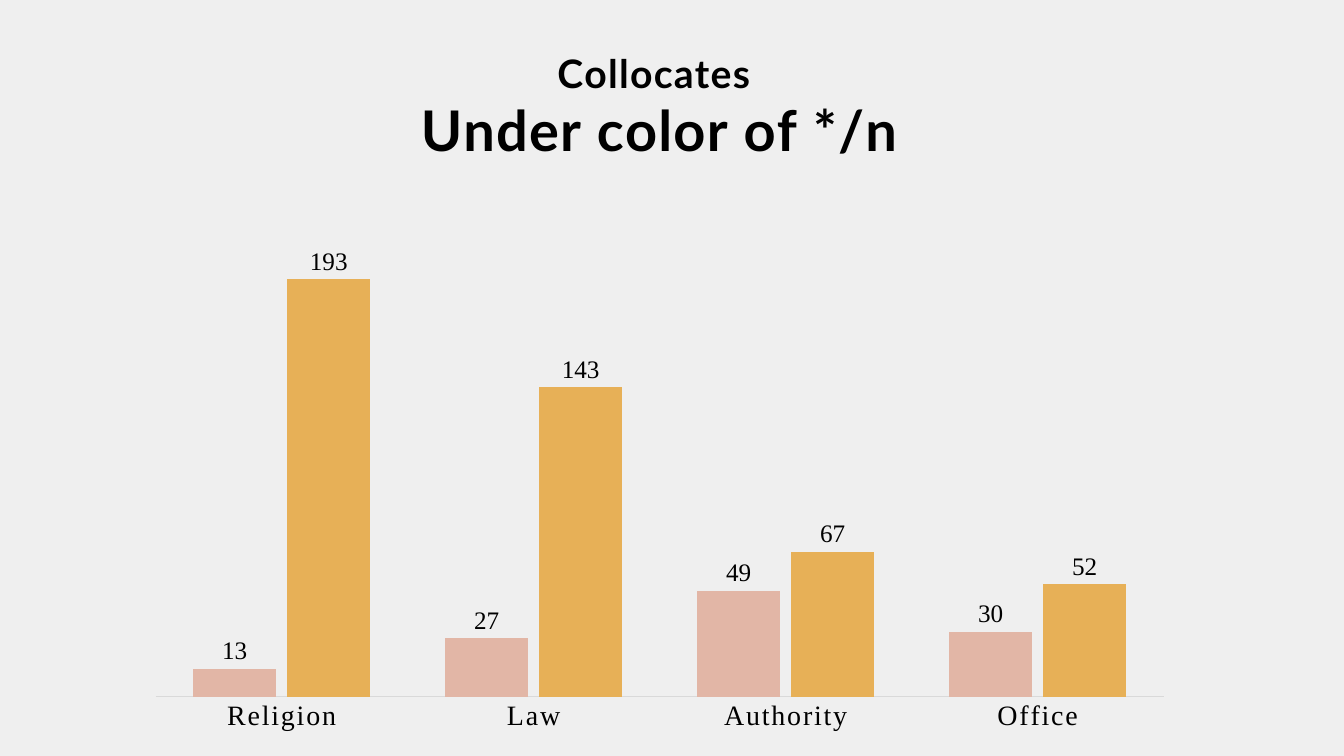
import pptx
import pptx.chart.data
import pptx.dml.color
import pptx.enum.chart
import pptx.oxml
import pptx.oxml.ns
import pptx.util

Pt = pptx.util.Pt
qn = pptx.oxml.ns.qn
COLORS = {"page": "EFEFEF", "text": "000000", "axis": "D9D9D9",
          "Series 1": "E2B6A6", "Series 2": "E7B057"}
SERIF = "Times New Roman"


def style_font(font, **values):
    for name, value in values.items():
        setattr(font, name, value)
    font.color.rgb = pptx.dml.color.RGBColor.from_string(COLORS["text"])


def place(element, index, **values):
    for old in element.findall(qn("c:layout")):
        element.remove(old)
    layout = pptx.oxml.parse_xml(f'<c:layout {pptx.oxml.ns.nsdecls("c")}><c:manualLayout/></c:layout>')
    for name, value in values.items():
        layout[0].makeelement(qn(f"c:{name}"))
        child = pptx.oxml.parse_xml(f'<c:{name} {pptx.oxml.ns.nsdecls("c")} val="{value}"/>')
        layout[0].append(child)
    element.insert(index, layout)


deck = pptx.Presentation()
deck.slide_width, deck.slide_height = Pt(960), Pt(540)
page = deck.slides.add_slide(deck.slide_layouts[6])
page.background.fill.solid()
page.background.fill.fore_color.rgb = pptx.dml.color.RGBColor.from_string(COLORS["page"])

collocates = pptx.chart.data.CategoryChartData()
collocates.categories = ["Religion", "Law", "Authority", "Office"]
collocates.add_series("Series 1", [13, 27, 49, 30])
collocates.add_series("Series 2", [193, 143, 67, 52])
chart = page.shapes.add_chart(
    pptx.enum.chart.XL_CHART_TYPE.COLUMN_CLUSTERED,
    Pt(110.88), Pt(5.76), Pt(720.72), Pt(528.48), collocates).chart
chart.has_legend = False
style_font(chart.font, name=SERIF, size=Pt(10))

title = chart.chart_title
title_frame = title.text_frame
for index, (words, size) in enumerate([("Collocates ", 28), ("Under color of */n", 40)]):
    para = title_frame.paragraphs[0] if index == 0 else title_frame.add_paragraph()
    span = para.add_run()
    span.text = words
    style_font(span.font, name="Lato", size=Pt(size), bold=True)
    span.font._element.set("spc", "100")
title.include_in_layout = False
place(title.element, 1, xMode="edge", yMode="edge", x=0.26, y=0.05)

plot = chart.plots[0]
plot.gap_width, plot.overlap, plot.vary_by_categories = 90, -13, False
place(chart.element.find(".//" + qn("c:plotArea")), 0, layoutTarget="inner",
      xMode="edge", yMode="edge", x=0, y=0.2, w=1, h=0.731)

for series in plot.series:
    series.format.fill.solid()
    series.format.fill.fore_color.rgb = pptx.dml.color.RGBColor.from_string(COLORS[series.name])
    labels = series.data_labels
    labels.show_value = True
    labels.position = pptx.enum.chart.XL_LABEL_POSITION.OUTSIDE_END
    style_font(labels.font, name=SERIF, size=Pt(18))

counts = chart.value_axis
counts.minimum_scale, counts.maximum_scale = 0, 250
counts.has_major_gridlines = False
counts.visible = False

nouns = chart.category_axis
nouns.major_tick_mark = pptx.enum.chart.XL_TICK_MARK.NONE
nouns.format.line.width = Pt(0.75)
nouns.format.line.color.rgb = pptx.dml.color.RGBColor.from_string(COLORS["axis"])
noun_font = nouns.tick_labels.font
style_font(noun_font, name=SERIF, size=Pt(20))
noun_font._element.set("spc", "120")

deck.save("out.pptx")
